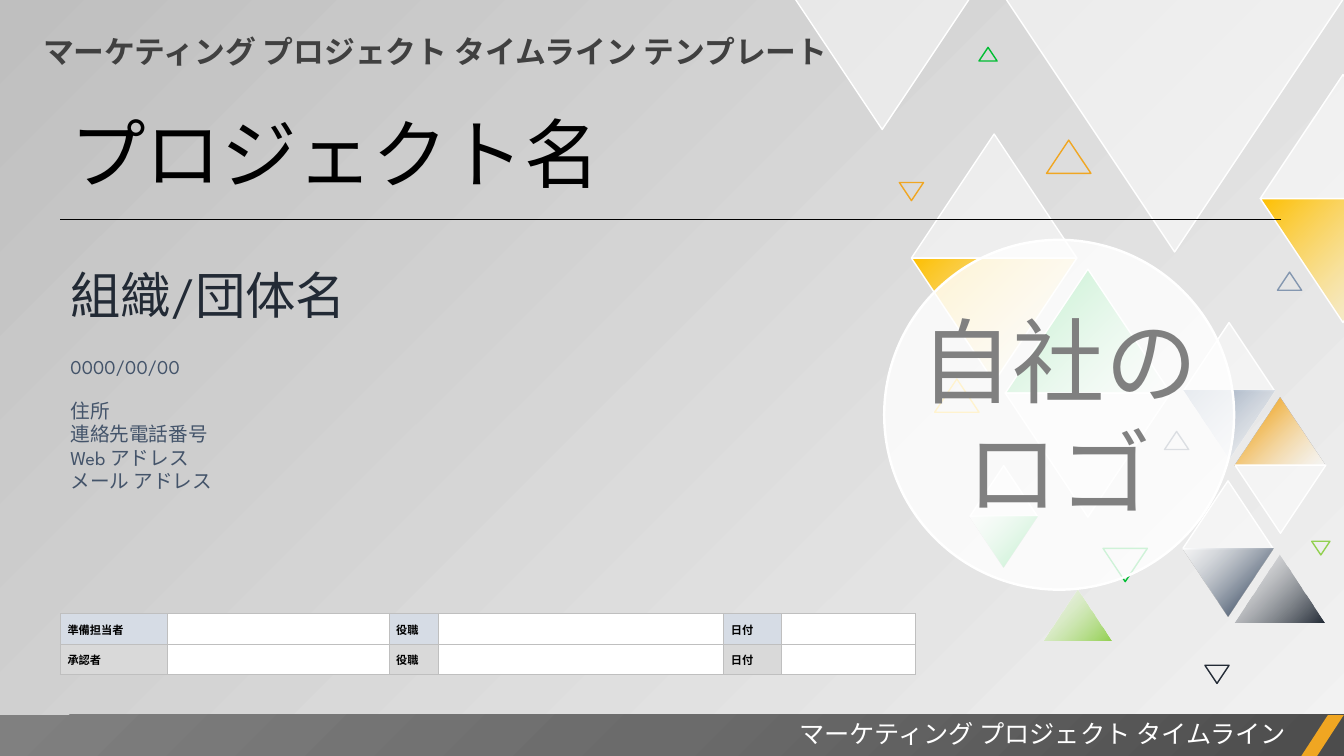
from lxml import etree
from pptx import Presentation
from pptx.dml.color import RGBColor
from pptx.enum.shapes import MSO_CONNECTOR, MSO_SHAPE
from pptx.enum.text import MSO_ANCHOR, PP_ALIGN
from pptx.oxml import parse_xml
from pptx.oxml.ns import nsdecls, qn
from pptx.util import Inches, Pt

TRIANGLE, OVAL, SLANT = MSO_SHAPE.ISOSCELES_TRIANGLE, MSO_SHAPE.OVAL, MSO_SHAPE.PARALLELOGRAM
STRAIGHT = MSO_CONNECTOR.STRAIGHT
LEFT, CENTER, RIGHT = PP_ALIGN.LEFT, PP_ALIGN.CENTER, PP_ALIGN.RIGHT
MIDDLE = MSO_ANCHOR.MIDDLE

W, H = 13.33, 7.5
FONT = "League Spartan"
C = {
    "white": "FFFFFF", "black": "000000", "heading": "404040", "navy": "222A35",
    "slate": "44546A", "steel": "8497B0", "gold": "FFC000", "amber": "F0A622",
    "green": "00BD32", "lime": "92D050", "gray": "808080", "rule": "BFBFBF",
    "pale": "F2F2F2", "prepared": "D6DCE5", "approved": "D9D9D9",
    "bar_dark": "4C4C4C", "bar_mid": "6B6B6B",
}
DIAGONAL = '<a:lin ang="13500000" scaled="0"/>'
FROM_CORNER = '<a:path path="circle"><a:fillToRect l="100000" t="100000"/></a:path>'


def color_xml(name, alpha=100):
    return f'<a:srgbClr val="{C[name]}"><a:alpha val="{alpha * 1000}"/></a:srgbClr>'


def glass(alpha=50):
    return f'<a:solidFill {nsdecls("a")}>{color_xml("white", alpha)}</a:solidFill>'


def gradient(*stops, shade=DIAGONAL):
    """Gradient fill XML from (position, colour[, alpha]) stops."""
    gs = "".join(f'<a:gs pos="{pos * 1000}">{color_xml(*c)}</a:gs>' for pos, *c in stops)
    return f'<a:gradFill {nsdecls("a")} rotWithShape="1"><a:gsLst>{gs}</a:gsLst>{shade}</a:gradFill>'


def fade_from(name):
    return gradient((0, name), (100, "white", 50))


def fade_to(name):
    return gradient((0, "white", 50), (82, name))


def paint(fill, parent, xml):
    """Put fill XML where the parent element holds its fill."""
    fill.background()
    empty = parent.find(qn("a:noFill"))
    parent.replace(empty, parse_xml(xml))


def style(sp, fill=None, line=None, width=1):
    sp.shadow.inherit = False
    if fill:
        paint(sp.fill, sp._element.spPr, fill)
    else:
        sp.fill.background()
    if line:
        sp.line.color.rgb = RGBColor.from_string(C[line])
        sp.line.width = Pt(width)
    else:
        sp.line.fill.background()


def add_shape(s, kind, x, y, w, h):
    return s.shapes.add_shape(kind, Inches(x), Inches(y), Inches(w), Inches(h))


def write(p, text, size, color, bold=False, align=LEFT):
    p.text = text
    p.alignment = align
    f = p.font
    f.name, f.size, f.bold = FONT, Pt(size), bold
    f.color.rgb = RGBColor.from_string(C[color])


def add_text(s, box, lines, align=LEFT):
    """Lines are (text, size, colour, bold, space before)."""
    tf = s.shapes.add_textbox(*map(Inches, box)).text_frame
    tf.word_wrap = True
    for i, (text, size, color, bold, before) in enumerate(lines):
        p = tf.add_paragraph() if i else tf.paragraphs[0]
        write(p, text, size, color, bold, align)
        p.space_before = Pt(before)


def triangle(s, x, y, w, up, fill=None, line=None):
    sp = add_shape(s, TRIANGLE, x, y, w, w * 0.75)
    sp.rotation = 0 if up else 180
    style(sp, fill, line)


def triangle_pattern(s, x, y):
    pane = glass()
    diamonds = [  # left, top, width, upper fill, upper line, lower fill, lower line
        (1.24, 1.33, 1.64, pane, "white", fade_from("gold"), "white"),
        (2.17, 2.67, 1.64, fade_to("green"), "white", pane, "white"),
        (3.93, 4.77, 0.9, pane, "white", fade_to("slate"), None),
        (3.94, 3.2, 0.9, pane, "white", fade_from("steel"), None),
        (4.45, 3.94, 0.9, fade_to("amber"), None, pane, "white"),
        (1.82, 4.62, 0.67, pane, "white", fade_to("green"), None),
        (4.7, 0.74, 1.64, pane, "white", fade_from("gold"), "white"),
    ]
    singles = [  # left, top, width, points up, fill, line
        (2.17, -0.02, 3.36, False, pane, "white"),
        (0.08, -0.02, 1.74, False, pane, "white"),
        (4.44, 5.5, 0.9, True, fade_from("navy"), None),
        (2.55, 5.85, 0.67, True, fade_from("lime"), None),
        (3.14, 5.44, 0.44, False, None, "green"),
        (1.47, 3.76, 0.44, True, None, "gold"),
        (3.75, 4.28, 0.24, True, None, "slate"),
        (4.15, 6.6, 0.24, False, None, "navy"),
        (1.12, 1.81, 0.24, False, None, "amber"),
        (4.87, 2.7, 0.24, True, None, "steel"),
        (1.91, 0.47, 0.18, True, None, "green"),
        (5.21, 5.37, 0.18, False, None, "lime"),
        (2.58, 1.39, 0.44, True, None, "amber"),
    ]
    for dx, dy, w, top, top_line, bottom, bottom_line in diamonds:
        triangle(s, x + dx, y + dy, w, True, top, top_line)
        triangle(s, x + dx, y + dy + w * 0.75, w, False, bottom, bottom_line)
    for dx, dy, *rest in singles:
        triangle(s, x + dx, y + dy, *rest)


def footer(s, x, y, w, h):
    fb = s.shapes.build_freeform(Inches(x), Inches(y))
    fb.add_line_segments([(Inches(a), Inches(b)) for a, b in
                          ((x + w, y), (x + w, y + h), (x, y + h))], close=True)
    style(fb.convert_to_shape(), gradient((0, "bar_dark"), (50, "bar_mid"), (100, "gray"),
                                          shade=FROM_CORNER))
    accent = add_shape(s, SLANT, x + w - 0.43, y, 0.43, h)
    accent.adjustments[0] = 0.65
    style(accent, gradient((0, "amber"), (100, "amber")))
    add_text(s, (x + w - 8.08, y - 0.01, 7.6, 0.4),
             [("マーケティング プロジェクト タイムライン", 18, "white", False, 0)], RIGHT)


def titles(s, x, y, w):
    add_text(s, (x - 0.27, y, 8.61, 0.47),
             [("マーケティング プロジェクト タイムライン テンプレート", 22, "heading", True, 0)])
    add_text(s, (x, y + 0.73, w, 1.01), [("プロジェクト名", 54, "black", False, 0)])
    contact = [("0000/00/00", 22), ("住所", 14), ("連絡先電話番号", 0),
               ("Web アドレス", 0), ("メール アドレス", 0)]
    add_text(s, (x, y + 2.29, 8.9, 2.46),
             [("組織/団体名", 36, "navy", False, 0)]
             + [(text, 14, "slate", False, gap) for text, gap in contact])
    rule = s.shapes.add_connector(STRAIGHT, Inches(x), Inches(y + 1.9),
                                  Inches(x + 12.11), Inches(y + 1.9))
    rule.line.color.rgb = RGBColor.from_string(C["black"])
    rule.line.width = Pt(0.5)
    etree.SubElement(rule._element.spPr, qn("a:effectLst"))


def logo_disc(s, x, y, size):
    disc = add_shape(s, OVAL, x, y, size, size)
    style(disc, glass(81), "white", 1.75)
    tf = disc.text_frame
    tf.word_wrap = False
    tf.vertical_anchor = MIDDLE
    tf.margin_left = tf.margin_right = tf.margin_top = tf.margin_bottom = 0
    write(tf.paragraphs[0], "自社の", 66, "gray", align=CENTER)
    write(tf.add_paragraph(), "ロゴ", 66, "gray", align=CENTER)


def fill_cell(cell, text, color):
    cell.margin_left = cell.margin_right = Inches(0.07)
    cell.margin_top = cell.margin_bottom = 0
    cell.vertical_anchor = MIDDLE
    p = cell.text_frame.paragraphs[0]
    write(p, text, 8, "black", True)
    p.line_spacing = 1.07
    tc_pr = cell._tc.get_or_add_tcPr()
    for side in ("lnL", "lnR", "lnT", "lnB"):
        tc_pr.append(parse_xml(f'<a:{side} {nsdecls("a")} w="12700"><a:solidFill>'
                               f'{color_xml("rule")}</a:solidFill></a:{side}>'))
    cell.fill.solid()
    cell.fill.fore_color.rgb = RGBColor.from_string(C[color])


def approval_table(s, x, y, w, h):
    columns = [1.06, 2.2, 0.49, 2.83, 0.57, 1.33]
    rows = [("準備担当者", "prepared"), ("承認者", "approved")]
    table = s.shapes.add_table(len(rows), len(columns), Inches(x), Inches(y),
                               Inches(w), Inches(h)).table
    for column, width in zip(table.columns, columns):
        column.width = Inches(width)
    for r, (person, color) in enumerate(rows):
        for c, text in enumerate((person, "", "役職", "", "日付", "")):
            fill_cell(table.cell(r, c), text, color if text else "white")


def cover(prs):
    s = prs.slides.add_slide(prs.slide_layouts[6])
    fill = s.background.fill
    fill.background()
    paint(fill, s._element.find(".//" + qn("p:bgPr")),
          gradient((0, "pale", 40), (100, "rule")))
    triangle_pattern(s, 7.8, 0)
    footer(s, 0, 7.09, W, 0.42)
    titles(s, 0.6, 0.28, 12.27)
    logo_disc(s, 8.77, 2.38, 3.47)
    approval_table(s, 0.6, 6.09, 8.47, 0.6)


def main():
    prs = Presentation()
    prs.slide_width, prs.slide_height = Inches(W), Inches(H)
    cover(prs)
    prs.save("out.pptx")


if __name__ == "__main__":
    main()
